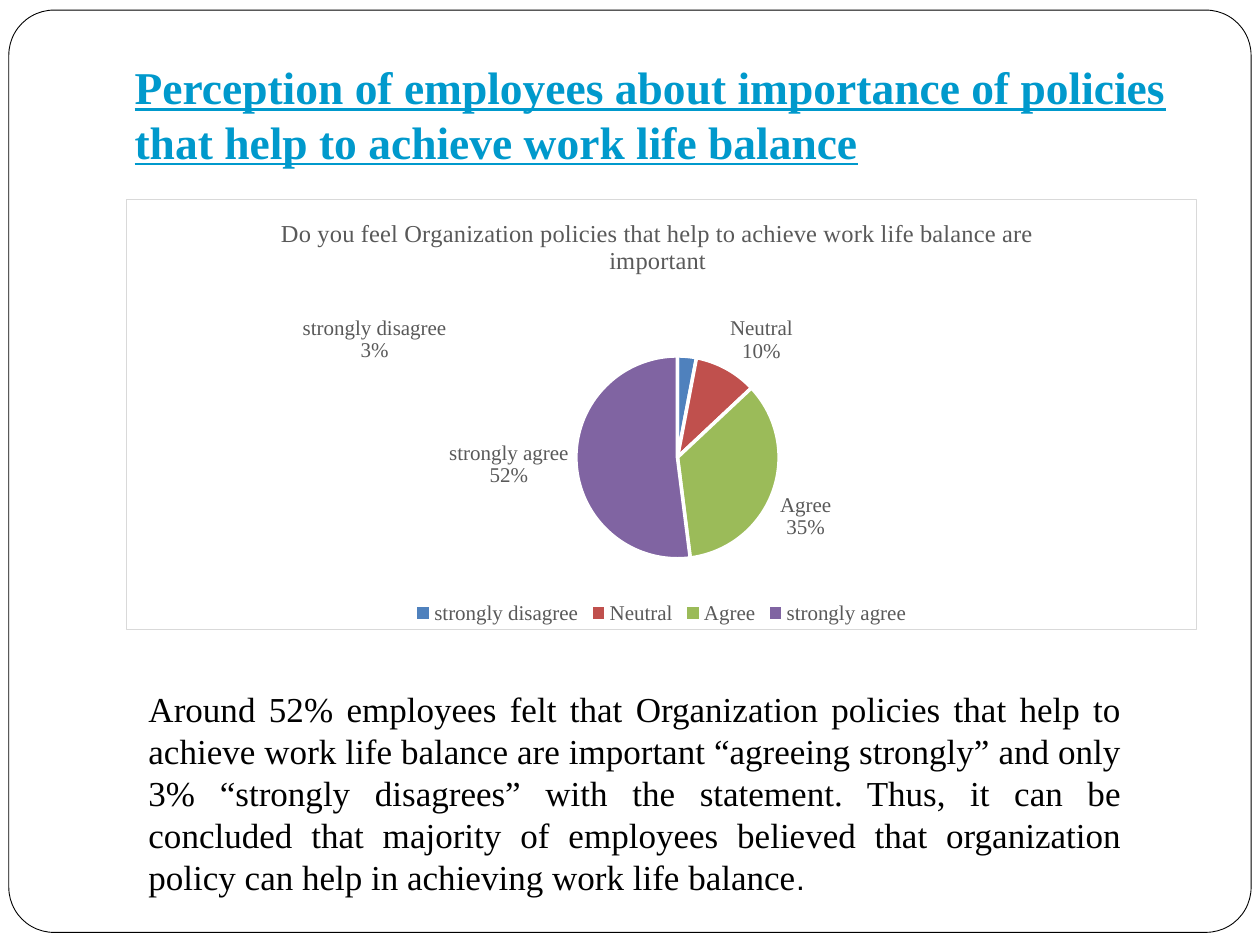
"""Build the slide on employees' perception of work life balance policies."""
from dataclasses import dataclass

from lxml.etree import SubElement
from pptx import Presentation
from pptx.chart.chart import Chart
from pptx.chart.data import CategoryChartData
from pptx.dml.color import RGBColor
from pptx.enum.chart import XL_CHART_TYPE, XL_LABEL_POSITION, XL_LEGEND_POSITION
from pptx.enum.shapes import MSO_SHAPE
from pptx.enum.text import PP_ALIGN
from pptx.oxml import parse_xml
from pptx.oxml.ns import nsdecls, qn
from pptx.slide import Slide
from pptx.util import Inches, Pt

WHITE = RGBColor(0xFF, 0xFF, 0xFF)
BLACK = RGBColor(0x00, 0x00, 0x00)
GREY = RGBColor(0x59, 0x59, 0x59)
BORDER = RGBColor(0xD9, 0xD9, 0xD9)
TITLE_BLUE = RGBColor(0x00, 0x99, 0xCC)
SERIF = "Times New Roman"


@dataclass
class Box:
    left: float
    top: float
    width: float
    height: float

    def emu(self) -> list[int]:
        return [Inches(v) for v in (self.left, self.top, self.width, self.height)]


@dataclass
class Run:
    text: str
    size: int
    font: str = SERIF


@dataclass
class TextBlock:
    box: Box
    runs: list[Run]
    color: RGBColor
    heading: bool = False
    align: PP_ALIGN = PP_ALIGN.LEFT


@dataclass
class Answer:
    label: str
    percent: int
    color: RGBColor


FRAME = Box(0.07, 0.08, 9.86, 7.32)
CHART = Box(1, 1.58, 8.5, 3.42)
PIE = Box(0.42, 0.36, 0.19, 0.48)
QUESTION = "Do you feel Organization policies that help to achieve work life balance are important"
ANSWERS = [
    Answer("strongly disagree", 3, RGBColor(0x4F, 0x81, 0xBD)),
    Answer("Neutral", 10, RGBColor(0xC0, 0x50, 0x4D)),
    Answer("Agree", 35, RGBColor(0x9B, 0xBB, 0x59)),
    Answer("strongly agree", 52, RGBColor(0x80, 0x64, 0xA2)),
]
TEXTS = [
    TextBlock(
        Box(0.97, 0.42, 8.53, 0.98),
        [Run("Perception of employees about importance of policies that help to "
             "achieve work life balance", 26)],
        TITLE_BLUE, heading=True),
    TextBlock(
        Box(1.08, 5.41, 7.92, 1.78),
        [Run("Around 52% employees felt that Organization policies that help to achieve "
             "work life balance are important “agreeing strongly” and only 3% “strongly "
             "disagrees” with the statement. Thus, it can be concluded that majority of "
             "employees believed that organization policy can help in achieving work life "
             "balance", 20),
         Run(".", 18, "Arial")],
        BLACK, align=PP_ALIGN.JUSTIFY),
]


def add_frame(s: Slide) -> None:
    sp = s.shapes.add_shape(MSO_SHAPE.ROUNDED_RECTANGLE, *FRAME.emu())
    sp.adjustments[0] = 0.049
    sp.shadow.inherit = False
    sp.fill.solid()
    sp.fill.fore_color.rgb = WHITE
    sp.line.color.rgb = BLACK
    sp.line.width = Pt(0.5)


def add_text(s: Slide, block: TextBlock) -> None:
    tf = s.shapes.add_textbox(*block.box.emu()).text_frame
    tf.word_wrap = True
    p = tf.paragraphs[0]
    p.alignment = block.align
    p.font.color.rgb = block.color
    p.font.bold = p.font.underline = block.heading
    for run in block.runs:
        r = p.add_run()
        r.text = run.text
        r.font.size = Pt(run.size)
        r.font.name = run.font
        r.font.color.rgb = block.color


def style_font(font, size: int) -> None:
    font.name = SERIF
    font.size = Pt(size)
    font.bold = False
    font.color.rgb = GREY


def manual_layout(**values: float | str):
    layout = parse_xml(f"<c:layout {nsdecls('c')}><c:manualLayout/></c:layout>")
    for tag, value in values.items():
        SubElement(layout[0], qn(f"c:{tag}")).set("val", str(value))
    return layout


def drop_layout(element) -> None:
    for old in element.findall(qn("c:layout")):
        element.remove(old)


def set_separator(labels) -> None:
    separator = parse_xml(f"<c:separator {nsdecls('c')}>\n</c:separator>")
    labels.find(qn("c:showBubbleSize")).addnext(separator)


def style_labels(chart: Chart) -> None:
    series = chart.plots[0].series[0]
    labels = series.data_labels
    labels.show_category_name = labels.show_percentage = True
    labels.show_value = False
    labels.number_format = "0%"
    labels.number_format_is_linked = False
    labels.position = XL_LABEL_POSITION.OUTSIDE_END
    style_font(labels.font, 12)
    first = series.points[0].data_label
    style_font(first.font, 12)
    first.position = XL_LABEL_POSITION.OUTSIDE_END
    group = labels._element
    label = group.find(qn("c:dLbl"))
    for tag, shown in (("showVal", 0), ("showCatName", 1), ("showPercent", 1)):
        label.find(qn(f"c:{tag}")).set("val", str(shown))
    label.find(qn("c:idx")).addnext(manual_layout(x=-0.36, y=0.03))
    set_separator(label)
    set_separator(group)
    for old in group.findall(qn("c:showLeaderLines")):
        group.remove(old)
    group.find(qn("c:separator")).addnext(
        parse_xml(f'<c:showLeaderLines {nsdecls("c")} val="0"/>'))


def add_pie(s: Slide) -> None:
    data = CategoryChartData()
    data.categories = [a.label for a in ANSWERS]
    data.add_series("Series 1", [a.percent for a in ANSWERS])
    chart = s.shapes.add_chart(XL_CHART_TYPE.PIE, *CHART.emu(), data).chart
    chart.font.name = SERIF
    chart.font.size = Pt(10)
    chart.has_title = True
    p = chart.chart_title.text_frame.paragraphs[0]
    p.text = QUESTION
    style_font(p.font, 14)
    style_font(p.runs[0].font, 14)
    title = chart.chart_title._element
    drop_layout(title)
    title.find(qn("c:tx")).addnext(manual_layout(xMode="edge", yMode="edge", x=0.14, y=0.03))
    chart.has_legend = True
    chart.legend.position = XL_LEGEND_POSITION.BOTTOM
    chart.legend.include_in_layout = False
    style_font(chart.legend.font, 12)
    chart.plots[0].vary_by_categories = True
    for i, answer in enumerate(ANSWERS):
        fmt = chart.plots[0].series[0].points[i].format
        fmt.fill.solid()
        fmt.fill.fore_color.rgb = answer.color
        fmt.line.color.rgb = WHITE
        fmt.line.width = Pt(2)
    style_labels(chart)
    root = chart._chartSpace
    area = root.find(qn("c:chart")).find(qn("c:plotArea"))
    drop_layout(area)
    area.insert(0, manual_layout(layoutTarget="inner", xMode="edge", yMode="edge",
                                 x=PIE.left, y=PIE.top, w=PIE.width, h=PIE.height))
    root.find(qn("c:chart")).addnext(parse_xml(
        f"<c:spPr {nsdecls('c', 'a')}>"
        f'<a:solidFill><a:srgbClr val="{WHITE}"/></a:solidFill>'
        f'<a:ln w="{Pt(0.75)}"><a:solidFill><a:srgbClr val="{BORDER}"/></a:solidFill></a:ln>'
        "</c:spPr>"))


def main() -> None:
    prs = Presentation()
    prs.slide_width, prs.slide_height = Inches(10), Inches(7.5)
    s = prs.slides.add_slide(prs.slide_layouts[6])
    add_frame(s)
    add_pie(s)
    for block in TEXTS:
        add_text(s, block)
    prs.save("out.pptx")


if __name__ == "__main__":
    main()
